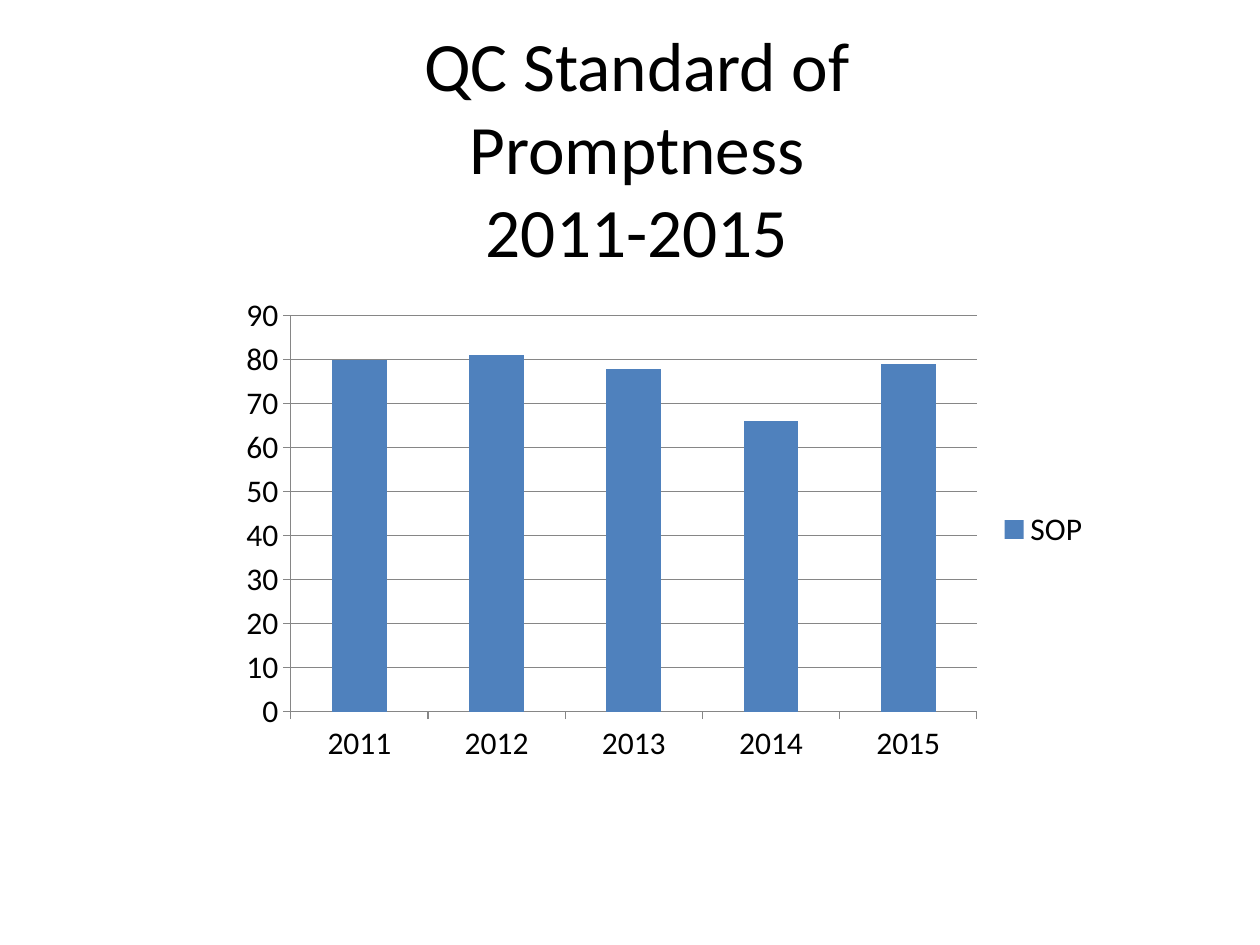
from pptx import Presentation
from pptx import util as u
from pptx.chart.data import CategoryChartData
from pptx.dml.color import RGBColor
from pptx.enum import chart as ch, text

PX = 914400 / 126
FONT = "Calibri"
COLORS = {"text": "000000", "bar": "4F81BD", "grid": "868686"}
SOP = {"2011": 80, "2012": 81, "2013": 78, "2014": 66, "2015": 79}


def px(*lengths):
    return [u.Emu(round(n * PX)) for n in lengths]


def rgb(name):
    return RGBColor.from_string(COLORS[name])


def style_font(font, size):
    font.name = FONT
    font.size = u.Pt(size)
    font.color.rgb = rgb("text")


def style_line(line):
    line.color.rgb = rgb("grid")
    line.width = u.Pt(0.75)


def set_title(s, title, box):
    sp = s.shapes.title
    sp.left, sp.top, sp.width, sp.height = px(*box)
    tf = sp.text_frame
    tf.text = title
    tf.word_wrap = True
    tf.auto_size = text.MSO_AUTO_SIZE.NONE
    tf.vertical_anchor = text.MSO_ANCHOR.MIDDLE
    p = tf.paragraphs[0]
    p.alignment = text.PP_ALIGN.CENTER
    for r in p.runs:
        style_font(r.font, 39.6)


def add_column_chart(s, name, values, box):
    data = CategoryChartData()
    data.categories = list(values)
    data.add_series(name, list(values.values()))
    chart = s.shapes.add_chart(ch.XL_CHART_TYPE.COLUMN_CLUSTERED, *px(*box), data).chart
    style_font(chart.font, 18)
    chart.has_title = False

    # Legend
    chart.has_legend = True
    chart.legend.position = ch.XL_LEGEND_POSITION.RIGHT
    chart.legend.include_in_layout = False

    # Columns
    plot = chart.plots[0]
    plot.gap_width = 150
    plot.vary_by_categories = False
    fill = plot.series[0].format.fill
    fill.solid()
    fill.fore_color.rgb = rgb("bar")

    # Axes and gridlines
    for axis in (chart.category_axis, chart.value_axis):
        axis.major_tick_mark = ch.XL_TICK_MARK.OUTSIDE
        axis.minor_tick_mark = ch.XL_TICK_MARK.NONE
        style_line(axis.format.line)
    axis = chart.value_axis
    axis.minimum_scale, axis.maximum_scale, axis.major_unit = 0, 90, 10
    axis.has_major_gridlines = True
    style_line(axis.major_gridlines.format.line)


def main():
    prs = Presentation()
    prs.slide_width, prs.slide_height = px(1260, 945)
    s = prs.slides.add_slide(prs.slide_layouts[5])
    set_title(s, "QC Standard of Promptness\v2011-2015", (263, 105, 748, 84))
    add_column_chart(s, "SOP", SOP, (229, 287, 874, 485))
    prs.save("out.pptx")


if __name__ == "__main__":
    main()
